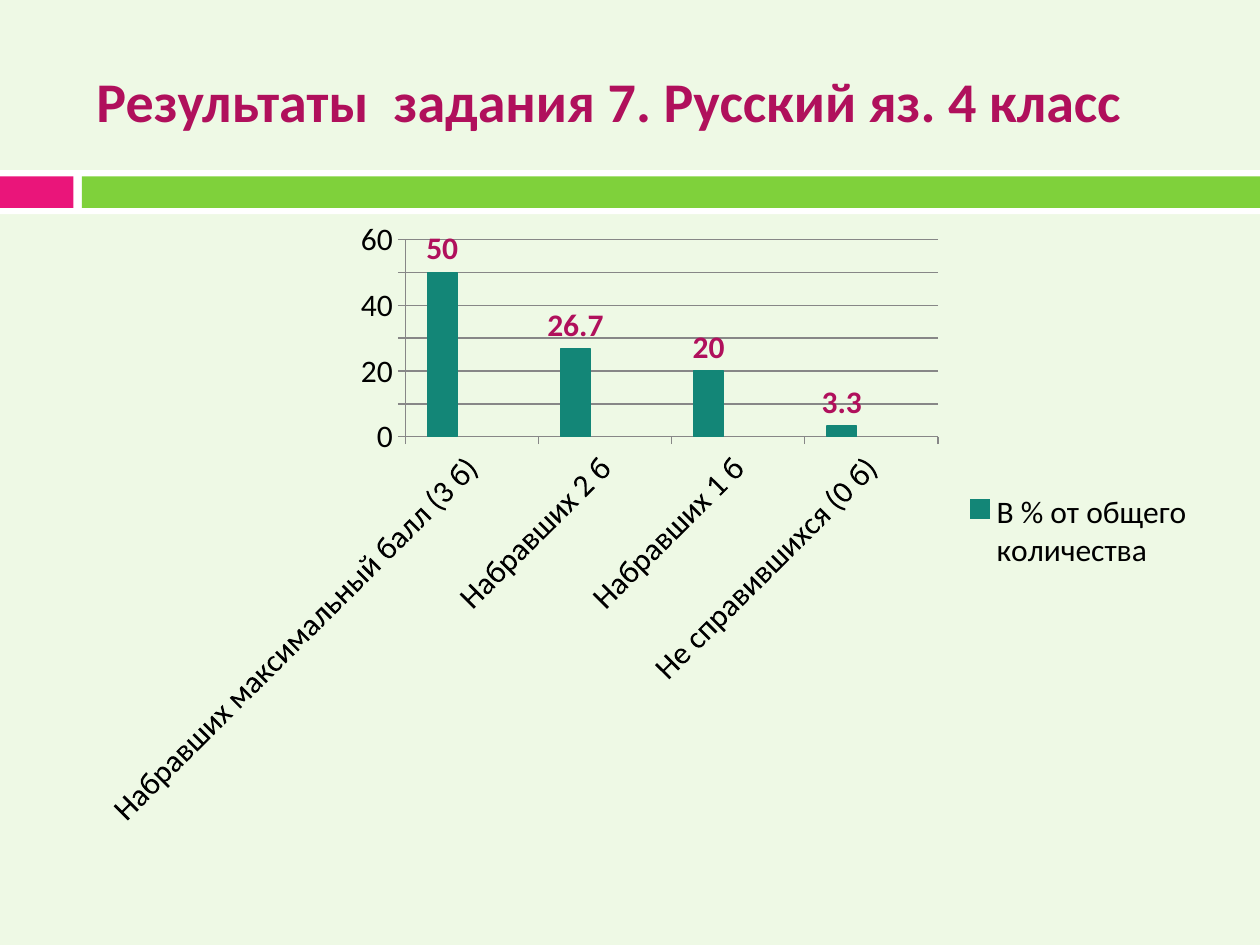
from lxml.etree import SubElement
from pptx import Presentation
from pptx.chart.data import CategoryChartData
from pptx.dml.color import RGBColor
from pptx.enum.chart import XL_CHART_TYPE, XL_LABEL_POSITION, XL_LEGEND_POSITION, XL_TICK_MARK
from pptx.enum.shapes import MSO_SHAPE
from pptx.enum.text import MSO_ANCHOR, PP_ALIGN
from pptx.oxml.ns import qn
from pptx.util import Pt

COLORS = {
    "background": "EEF9E5",
    "white": "FFFFFF",
    "pink": "EA157A",
    "green": "7FD13B",
    "crimson": "B0105C",
    "teal": "138677",
    "amber": "FEB80A",
    "text": "000000",
    "grid": "878787",
}
FONT = "Calibri"
CATEGORIES = ["Набравших максимальный балл (3 б)", "Набравших 2 б", "Набравших 1 б", "Не справившихся (0 б)"]
SERIES = [
    ("В % от общего количества", [50, 26.7, 20, 3.3], "teal"),
    ("Series 2", [None] * 4, "pink"),
    ("Series 3", [None] * 4, "amber"),
]


def color(name):
    """Return the named palette colour."""
    return RGBColor.from_string(COLORS[name])


def style_font(font, size, color_name, bold=False):
    """Apply the slide's typeface with a size, colour and weight."""
    font.name = FONT
    font.size = Pt(size)
    font.bold = bold
    font.color.rgb = color(color_name)


def add_bar(slide, left, top, width, height, color_name):
    """Add a plain filled rectangle."""
    shape = slide.shapes.add_shape(MSO_SHAPE.RECTANGLE, Pt(left), Pt(top), Pt(width), Pt(height))
    shape.shadow.inherit = False
    shape.fill.solid()
    shape.fill.fore_color.rgb = color(color_name)
    shape.line.fill.background()


def add_divider(slide, left, top, width, height):
    """Add the white band with its pink and green bars."""
    margin, accent, gap = 3.6, 42, 4.8
    bar_height = height - 2 * margin
    green_left = accent + gap
    add_bar(slide, left, top, width, height, "white")
    add_bar(slide, left, top + margin, accent, bar_height, "pink")
    add_bar(slide, left + green_left, top + margin, width - green_left, bar_height, "green")


def add_title(slide, left, top, width, height, text):
    """Add the slide heading."""
    frame = slide.shapes.add_textbox(Pt(left), Pt(top), Pt(width), Pt(height)).text_frame
    frame.word_wrap = True
    frame.vertical_anchor = MSO_ANCHOR.MIDDLE
    paragraph = frame.paragraphs[0]
    paragraph.text = text
    paragraph.alignment = PP_ALIGN.LEFT
    style_font(paragraph.font, 32, "crimson", bold=True)


def add_legend(chart, hidden_entries):
    """Show the legend on the right without the given entries."""
    chart.has_legend = True
    legend = chart.legend
    legend.position = XL_LEGEND_POSITION.RIGHT
    legend.include_in_layout = False
    position = legend._element.find(qn("c:legendPos"))
    for index in reversed(hidden_entries):
        entry = legend._element.makeelement(qn("c:legendEntry"))
        SubElement(entry, qn("c:idx")).set("val", str(index))
        SubElement(entry, qn("c:delete")).set("val", "1")
        position.addnext(entry)


def add_results_chart(slide, left, top, width, height):
    """Add the column chart of task results."""
    data = CategoryChartData()
    data.categories = CATEGORIES
    for name, values, _ in SERIES:
        data.add_series(name, values)
    chart = slide.shapes.add_chart(
        XL_CHART_TYPE.COLUMN_CLUSTERED, Pt(left), Pt(top), Pt(width), Pt(height), data
    ).chart
    chart.has_title = False
    style_font(chart.font, 18, "text")
    add_legend(chart, [1, 2])

    for axis in (chart.category_axis, chart.value_axis):
        axis.major_tick_mark = XL_TICK_MARK.OUTSIDE
        axis.format.line.color.rgb = color("grid")
    chart.value_axis.has_major_gridlines = True
    chart.value_axis.major_gridlines.format.line.color.rgb = color("grid")

    plot = chart.plots[0]
    plot.vary_by_categories = False
    plot.gap_width = 150
    plot.overlap = 0
    for series, (_, _, color_name) in zip(plot.series, SERIES):
        series.format.fill.solid()
        series.format.fill.fore_color.rgb = color(color_name)

    results = plot.series[0]
    results.format.line.color.rgb = color("teal")
    results.format.line.width = Pt(0.75)
    labels = results.data_labels
    labels.show_value = True
    labels.position = XL_LABEL_POSITION.OUTSIDE_END
    style_font(labels.font, 18, "crimson", bold=True)


def main():
    """Build and save the presentation."""
    presentation = Presentation()
    presentation.slide_width, presentation.slide_height = Pt(720), Pt(540)
    slide = presentation.slides.add_slide(presentation.slide_layouts[6])
    slide.background.fill.solid()
    slide.background.fill.fore_color.rgb = color("background")
    add_divider(slide, 0, 97.2, 720, 25.2)
    add_title(slide, 48, 18, 642, 78, "Результаты  задания 7. Русский яз. 4 класс")
    add_results_chart(slide, 48, 126, 642, 354)
    presentation.save("out.pptx")


if __name__ == "__main__":
    main()
